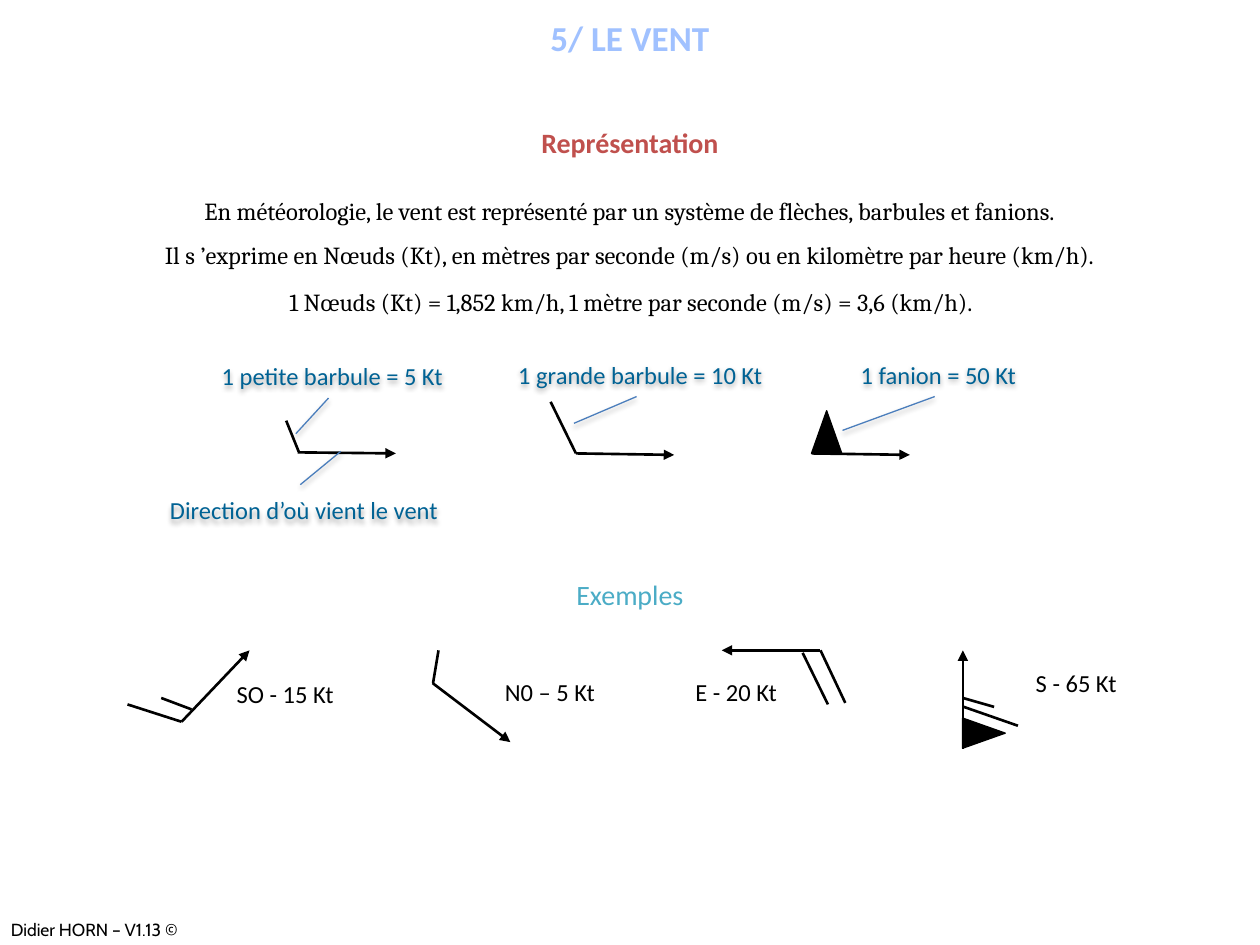
from dataclasses import dataclass

from lxml.etree import SubElement
from pptx import Presentation
from pptx.dml.color import RGBColor
from pptx.enum.shapes import MSO_CONNECTOR, MSO_SHAPE
from pptx.enum.text import MSO_ANCHOR, PP_ALIGN
from pptx.oxml import parse_xml
from pptx.oxml.ns import nsdecls, qn
from pptx.shapes.autoshape import Shape
from pptx.slide import Slide
from pptx.util import Cm, Pt

COLORS = {
    "black": "000000",
    "title": "A0C1FF",
    "heading": "C0504D",
    "examples": "4BACC6",
    "callout": "006294",
    "leader": "4B7EBC",
}
PAGE_WIDTH = 25.4
Point = tuple[float, float]
Segment = tuple[Point, Point]


@dataclass
class WindArrow:
    """A shaft pointing downwind, with its barbs and an optional pennant."""
    tail: Point
    head: Point
    barbs: tuple[Segment, ...] = ()
    pennant: Point | None = None
    pennant_rotation: float = 0


@dataclass
class Callout:
    """A label with a leader line, whose adjustments are y, x, y, x."""
    text: str
    left: float
    top: float
    adjustments: tuple[float, float, float, float]


@dataclass
class Label:
    """A speed and direction reading beside an example."""
    text: str
    left: float
    top: float
    width: float


ARROWS = (
    WindArrow((6, 9.12), (7.98, 9.14), (((6.02, 9.1), (5.77, 8.48)),)),
    WindArrow((11.61, 9.14), (13.59, 9.17), (((11.61, 9.14), (11.1, 8.1)),)),
    WindArrow((16.36, 9.14), (18.34, 9.17), pennant=(16.36, 8.28)),
    WindArrow((3.66, 14.55), (5.03, 13.11),
              (((3.66, 14.55), (2.57, 14.2)), ((3.86, 14.3), (3.25, 14.07)))),
    WindArrow((8.72, 13.77), (10.29, 14.96), (((8.73, 13.77), (8.84, 13.11)),)),
    WindArrow((16.54, 13.11), (14.55, 13.11),
              (((16.54, 13.11), (17.04, 14.17)), ((16.18, 13.16), (16.69, 14.2)))),
    WindArrow((19.41, 15.09), (19.41, 13.11),
              (((20.52, 14.63), (19.43, 14.25)), ((20.04, 14.25), (19.41, 14.07))),
              pennant=(19.53, 14.35), pennant_rotation=90),
)
CALLOUTS = (
    Callout("Direction d’où vient le vent", 2.7, 9.75, (0.021, 0.489, -0.608, 0.608)),
    Callout("1 petite barbule = 5 Kt", 3.27, 7.04, (0.921, 0.489, 1.592, 0.393)),
    Callout("1 grande barbule = 10 Kt", 9.48, 7.01, (0.921, 0.489, 1.425, 0.305)),
    Callout("1 fanion = 50 Kt", 15.49, 7.01, (0.921, 0.489, 1.558, 0.218)),
)
LABELS = (
    Label("SO - 15 Kt", 4.52, 13.57, 3.58),
    Label("N0 – 5 Kt", 9.93, 13.52, 3.38),
    Label("E - 20 Kt", 13.77, 13.53, 3.58),
    Label("S - 65 Kt", 20.63, 13.34, 3.1),
)
STATEMENTS = (
    ("En météorologie, le vent est représenté par un système de flèches, "
     "barbules et fanions.", 0, 3.82),
    ("Il s\u00a0’exprime en Nœuds (Kt), en mètres par seconde (m/s) ou en "
     "kilomètre par heure (km/h).", 0, 4.72),
    ("1 Nœuds (Kt) = 1,852 km/h, 1 mètre par seconde (m/s) = 3,6 (km/h).", 0.03, 5.66),
)


def color(name: str) -> RGBColor:
    """Look up a palette colour."""
    return RGBColor.from_string(COLORS[name])


def write_text(shape: Shape, text: str, *, size: float = 14, font: str = "Calibri",
               ink: str = "black", bold: bool = False, centered: bool = True,
               middle: bool = False, space_after: float = 0) -> None:
    """Fill a shape with one formatted paragraph."""
    frame = shape.text_frame
    frame.word_wrap = True
    frame.vertical_anchor = MSO_ANCHOR.MIDDLE if middle else MSO_ANCHOR.TOP
    paragraph = frame.paragraphs[0]
    paragraph.alignment = PP_ALIGN.CENTER if centered else PP_ALIGN.LEFT
    paragraph.space_after = Pt(space_after)
    run = paragraph.add_run()
    run.text = text
    run.font.size = Pt(size)
    run.font.name = font
    run.font.bold = bold
    run.font.color.rgb = color(ink)


def add_text_box(slide: Slide, left: float, top: float, width: float,
                 height: float) -> Shape:
    """Add an empty text box measured in centimetres."""
    return slide.shapes.add_textbox(Cm(left), Cm(top), Cm(width), Cm(height))


def draw_line(slide: Slide, start: Point, end: Point, arrow: bool = False) -> None:
    """Draw a black line, with an arrowhead at its end if asked."""
    line = slide.shapes.add_connector(MSO_CONNECTOR.STRAIGHT, Cm(start[0]), Cm(start[1]),
                                      Cm(end[0]), Cm(end[1]))
    line.line.width = Pt(1.5)
    line.line.color.rgb = color("black")
    if arrow:
        SubElement(line.line._get_or_add_ln(), qn("a:tailEnd"), type="triangle")
    SubElement(line._element.spPr, qn("a:effectLst"))


def draw_wind_arrow(slide: Slide, arrow: WindArrow) -> None:
    """Draw a wind symbol."""
    draw_line(slide, arrow.tail, arrow.head, arrow=True)
    for start, end in arrow.barbs:
        draw_line(slide, start, end)
    if arrow.pennant:
        left, top = arrow.pennant
        pennant = slide.shapes.add_shape(MSO_SHAPE.ISOSCELES_TRIANGLE, Cm(left), Cm(top),
                                         Cm(0.61), Cm(0.86))
        pennant.rotation = arrow.pennant_rotation
        pennant.shadow.inherit = False
        pennant.fill.solid()
        pennant.fill.fore_color.rgb = color("black")
        pennant.line.color.rgb = color("black")
        pennant.line.width = Pt(0.75)


def draw_callout(slide: Slide, callout: Callout) -> None:
    """Draw a borderless callout with a soft shadow."""
    shape = slide.shapes.add_shape(MSO_SHAPE.LINE_CALLOUT_1_NO_BORDER, Cm(callout.left),
                                   Cm(callout.top), Cm(6.86), Cm(1.07))
    for index, value in enumerate(callout.adjustments):
        shape.adjustments[index] = value
    shape.fill.background()
    shape.line.color.rgb = color("leader")
    shape.line.width = Pt(0.75)
    shape._element.spPr.append(parse_xml(
        f'<a:effectLst {nsdecls("a")}><a:outerShdw blurRad="{Pt(3.1)}" dist="{Pt(1.8)}" '
        f'dir="5400000" rotWithShape="0"><a:srgbClr val="{COLORS["black"]}">'
        '<a:alpha val="35000"/></a:srgbClr></a:outerShdw></a:effectLst>'))
    write_text(shape, callout.text, ink="callout", middle=True)


def main() -> None:
    """Build the wind slide."""
    presentation = Presentation()
    presentation.slide_width = Cm(PAGE_WIDTH)
    presentation.slide_height = Cm(19.05)
    slide = presentation.slides.add_slide(presentation.slide_layouts[6])

    write_text(add_text_box(slide, -0.03, 18.4, 4.5, 0.65), "Didier HORN – V1.13 ©",
               size=10, font="Cabin", centered=False)
    write_text(add_text_box(slide, 0, 0.08, PAGE_WIDTH, 1.37), "5/ LE VENT", size=20,
               ink="title", bold=True, middle=True, space_after=12)
    write_text(add_text_box(slide, 0, 2.4, PAGE_WIDTH, 0.94), "Représentation", size=16,
               ink="heading", bold=True, space_after=6)
    write_text(add_text_box(slide, 0, 11.52, PAGE_WIDTH, 0.94), "Exemples", size=16,
               ink="examples", space_after=6)
    for text, left, top in STATEMENTS:
        write_text(add_text_box(slide, left, top, PAGE_WIDTH, 0.86), text, font="Cambria")
    for label in LABELS:
        write_text(add_text_box(slide, label.left, label.top, label.width, 1.35),
                   label.text, centered=False)
    for arrow in ARROWS:
        draw_wind_arrow(slide, arrow)
    for callout in CALLOUTS:
        draw_callout(slide, callout)
    presentation.save("out.pptx")


if __name__ == "__main__":
    main()
